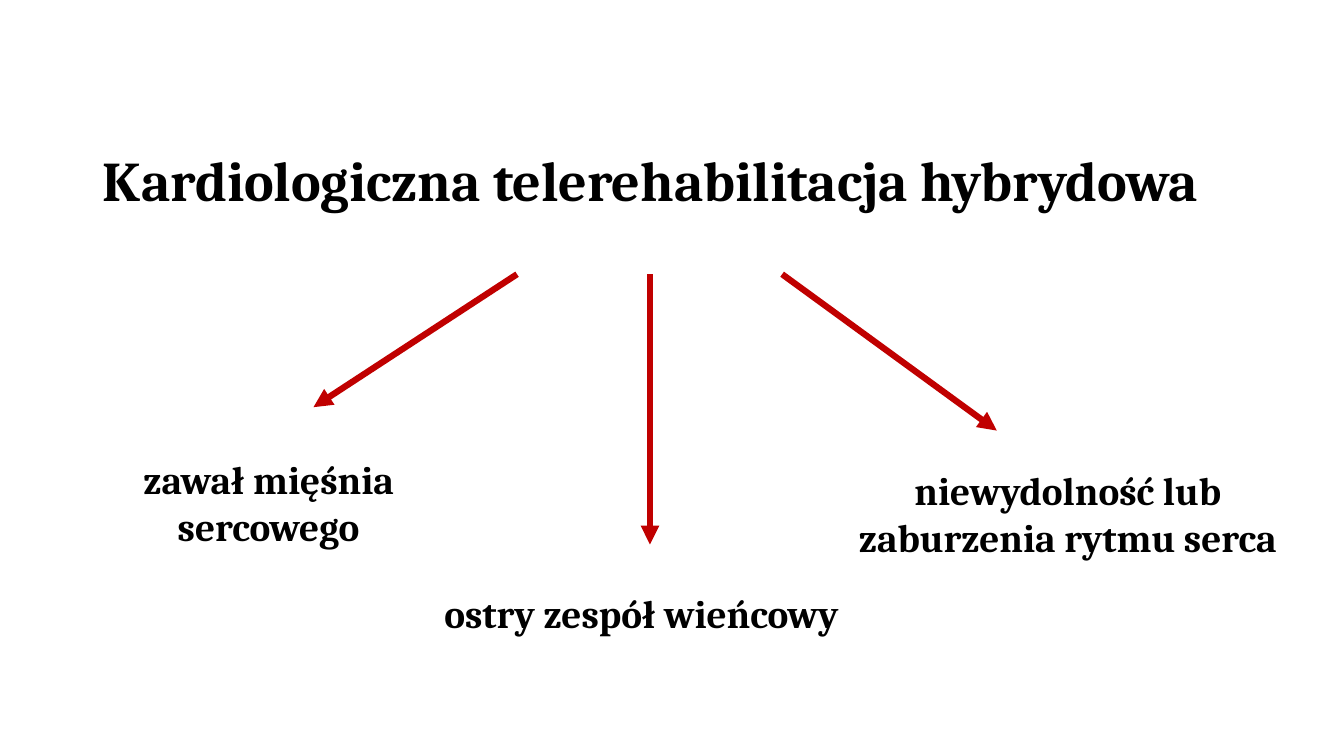
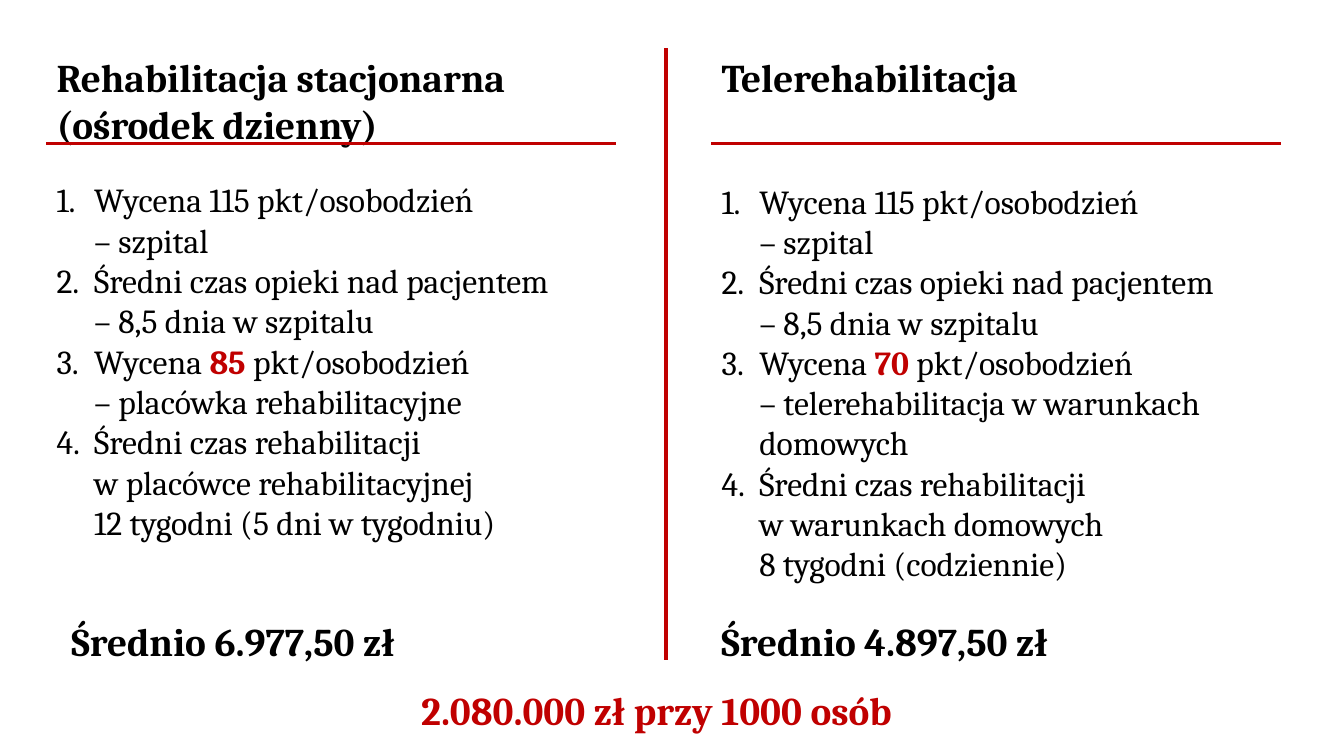
from lxml import etree
from pptx import Presentation
from pptx.dml.color import RGBColor
from pptx.enum import shapes, text as txt
from pptx.oxml import ns
from pptx.util import Cm, Pt

COLOURS = {"ink": "000000", "accent": "C00000"}
FONT = "Cambria"
HEADING_SIZE, LIST_SIZE = 28, 24
LIST_INDENT = 0.95

# Lengths are centimetres; boxes are left, top, width, height.
TITLE = "Kardiologiczna telerehabilitacja hybrydowa"
ARROW_TOP = 6.91
BRANCHES = [
    {"start": 13.03, "tip": (7.9, 10.26), "label": "zawał mięśnia sercowego",
     "box": (2.59, 11.35, 8.36, 2.64)},
    {"start": 16.38, "tip": (16.38, 13.72), "label": "ostry zespół wieńcowy",
     "box": (10.95, 14.73, 10.87, 1.45), "align": "LEFT"},
    {"start": 19.71, "tip": (25.12, 10.85), "label": "niewydolność lub zaburzenia rytmu serca",
     "box": (21.26, 11.63, 11.3, 2.64)},
]

# Asterisks enclose the highlighted figures; a newline is a break within an item.
SHARED_ITEMS = ["Wycena 115 pkt/osobodzień\n– szpital",
                "Średni czas opieki nad pacjentem\n– 8,5 dnia w szpitalu"]
COLUMN_WIDTH = 14.35
COLUMNS = [
    {"left": 1.17, "heading": "Rehabilitacja stacjonarna (ośrodek dzienny)",
     "items": SHARED_ITEMS + [
         "Wycena *85* pkt/osobodzień\n– placówka rehabilitacyjne",
         "Średni czas rehabilitacji\nw placówce rehabilitacyjnej\n12 tygodni (5 dni w tygodniu)"],
     "list_top": 4.39, "total": "Średnio 6.977,50 zł", "total_left": 1.55},
    {"left": 17.93, "heading": "Telerehabilitacja",
     "items": SHARED_ITEMS + [
         "Wycena *70* pkt/osobodzień\n– telerehabilitacja w warunkach domowych",
         "Średni czas rehabilitacji\nw warunkach domowych\n8 tygodni (codziennie)"],
     "list_top": 4.42, "total": "Średnio 4.897,50 zł", "total_left": 17.93},
]
SAVING = "2.080.000 zł przy 1000 osób"


def rgb(name):
    return RGBColor.from_string(COLOURS[name])


def add_span(para, content, size, bold, colour):
    span = para.add_run()
    span.text = content
    span.font.name, span.font.size, span.font.bold = FONT, Pt(size), bold
    span.font.color.rgb = rgb(colour)


def number_item(para):
    """Give a paragraph an automatic number and a hanging indent."""
    props = para._p.get_or_add_pPr()
    props.set("marL", str(Cm(LIST_INDENT)))
    props.set("indent", str(-Cm(LIST_INDENT)))
    etree.SubElement(props, ns.qn("a:buFont")).set("typeface", FONT)
    etree.SubElement(props, ns.qn("a:buAutoNum")).set("type", "arabicPeriod")


def write(box, place, paragraphs, size=HEADING_SIZE, bold=True, colour="ink",
          align="LEFT", anchor="TOP", spacing=1.0, numbered=False):
    """Place a text box or placeholder and fill it with formatted paragraphs."""
    box.left, box.top, box.width, box.height = map(Cm, place)
    frame = box.text_frame
    frame.word_wrap = True
    frame.auto_size = txt.MSO_AUTO_SIZE.NONE
    frame.vertical_anchor = txt.MSO_ANCHOR[anchor]
    for number, content in enumerate(paragraphs):
        para = frame.add_paragraph() if number else frame.paragraphs[0]
        para.alignment = txt.PP_ALIGN[align]
        para.line_spacing = spacing
        para.space_before = para.space_after = Pt(0)
        if numbered:
            number_item(para)
        for part, piece in enumerate(content.split("*")):
            marked = part % 2 == 1
            for row, line in enumerate(piece.split("\n")):
                if row:
                    para.add_line_break()
                if line:
                    add_span(para, line, size, bold or marked, "accent" if marked else colour)


def add_text(page, place, content, **style):
    write(page.shapes.add_textbox(0, 0, 0, 0), place, [content], **style)


def add_line(page, start, end, width, arrow=False):
    line = page.shapes.add_connector(shapes.MSO_CONNECTOR.STRAIGHT, *map(Cm, start + end))
    line.line.color.rgb = rgb("accent")
    line.line.width = Pt(width)
    if arrow:
        etree.SubElement(line.line._get_or_add_ln(), ns.qn("a:tailEnd")).set("type", "triangle")
    etree.SubElement(line._element.spPr, ns.qn("a:effectLst"))


def build_indications(deck):
    page = deck.slides.add_slide(deck.slide_layouts.get_by_name("Title Only"))
    write(page.shapes.title, (2.34, 2.77, 29.21, 3.68), [TITLE],
          size=40, anchor="MIDDLE", spacing=0.9)
    for branch in BRANCHES:
        add_line(page, (branch["start"], ARROW_TOP), branch["tip"], 4.5, arrow=True)
        add_text(page, branch["box"], branch["label"], align=branch.get("align", "CENTER"))


def build_comparison(deck):
    page = deck.slides.add_slide(deck.slide_layouts.get_by_name("Comparison"))
    add_line(page, (16.79, 1.22), (16.79, 16.64), 3)
    for number, column in enumerate(COLUMNS):
        left = column["left"]
        heading, listing = (page.placeholders[2 * number + step] for step in (1, 2))
        add_line(page, (left, 3.61), (left + COLUMN_WIDTH, 3.61), 2.25)
        write(heading, (left, 1.22, COLUMN_WIDTH, 2.64), [column["heading"]])
        write(listing, (left, column["list_top"], COLUMN_WIDTH, 10.4), column["items"],
              size=LIST_SIZE, bold=False, numbered=True)
        add_text(page, (column["total_left"], 15.44, 12, 1.45), column["total"])
    write(page.shapes.title, (10.36, 17.17, 13.46, 1.45), [SAVING], colour="accent")


def main():
    deck = Presentation()
    deck.slide_width, deck.slide_height = Cm(33.87), Cm(19.05)
    build_indications(deck)
    build_comparison(deck)
    deck.save("out.pptx")


if __name__ == "__main__":
    main()
